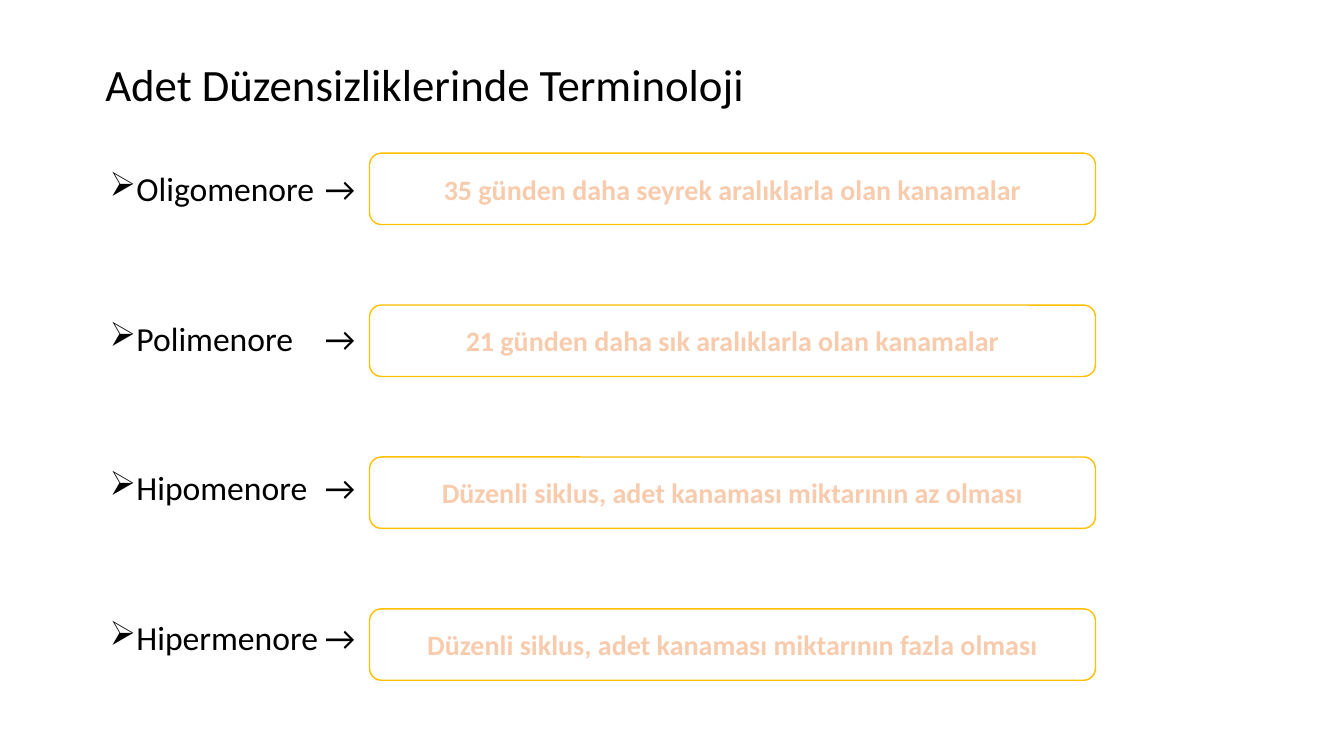
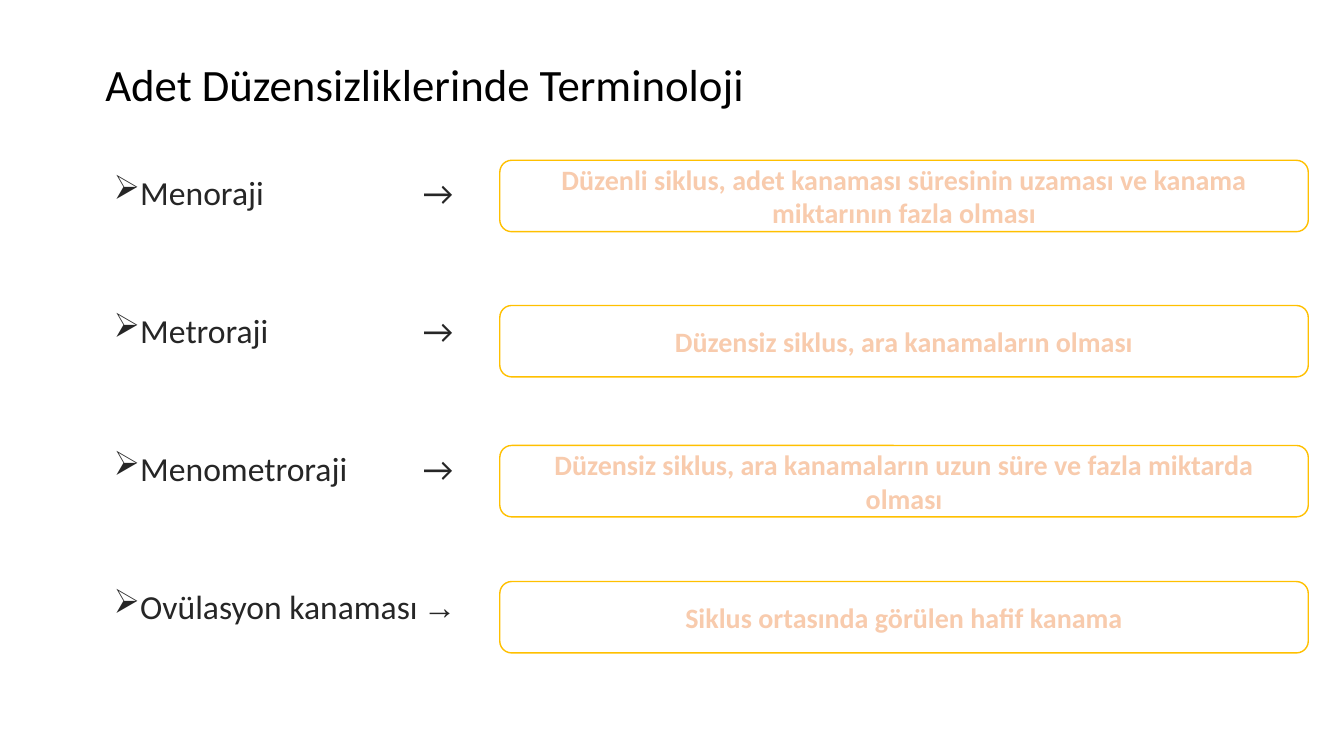
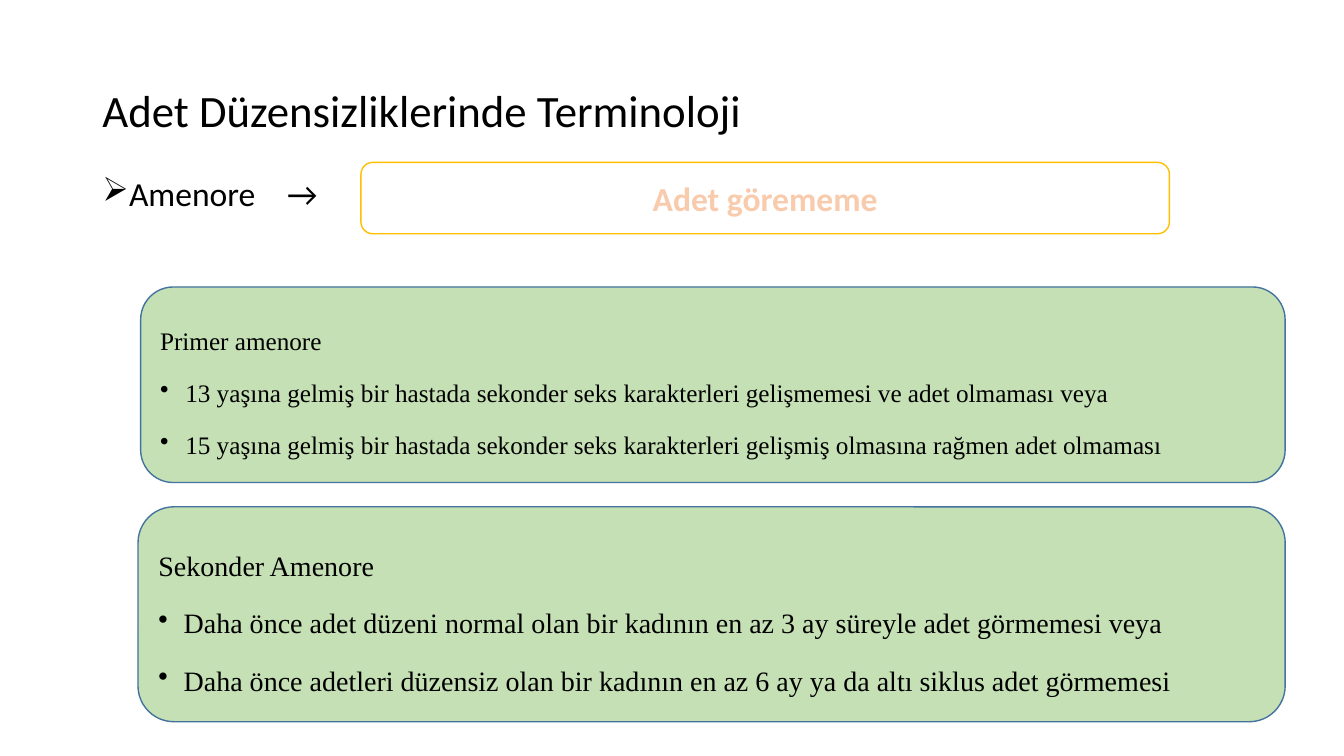
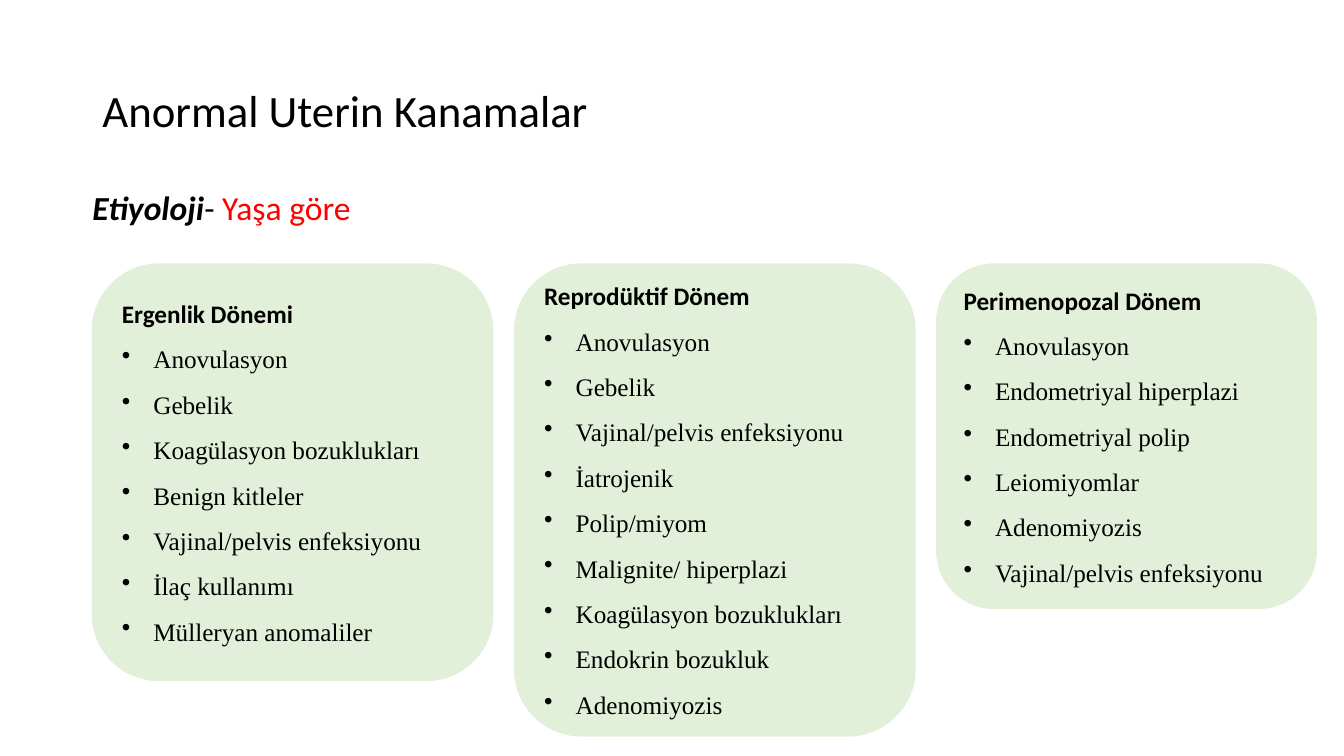
from pptx import Presentation
from pptx.dml.color import RGBColor
from pptx.enum.shapes import MSO_SHAPE as Shape
from pptx.enum.text import MSO_ANCHOR as Anchor, MSO_AUTO_SIZE as AutoSize, PP_ALIGN as Align
from pptx.oxml.ns import qn
from pptx.util import Pt
from lxml.etree import SubElement

# Shared style
SANS, SERIF = "Calibri", "Times New Roman"
BLACK, DARK, RED, WHITE = "000000", "262626", "FF0000", "FFFFFF"
GOLD, PEACH = "FFC000", "F8CBAD"
GREEN, PALE_GREEN, BLUE = "C5E0B4", "E2F0D9", "43739E"
HIGH_TITLE, LOW_TITLE = (68, 10), (66, 29)
TERMINOLOGY = "Adet Düzensizliklerinde Terminoloji"
DEFINITION_HEIGHT = 51


def color(hex_code):
    return RGBColor.from_string(hex_code)


def style(run, size, font=SANS, ink=BLACK, bold=False, italic=False):
    run.font.size = Pt(size)
    run.font.name = font
    run.font.color.rgb = color(ink)
    run.font.bold = bold
    run.font.italic = italic


def add_bullet(paragraph, char, indent):
    properties = paragraph._p.get_or_add_pPr()
    properties.set("marL", str(Pt(indent)))
    properties.set("indent", str(-Pt(indent)))
    SubElement(properties, qn("a:buChar")).set("char", char)


def write(frame, lines, size, font=SANS, ink=BLACK, bold=False, spacing=1.0,
          gap=0, align=Align.LEFT):
    """Fill a frame with evenly spaced paragraphs of one style."""
    frame.text = "\n".join(lines)
    for index, paragraph in enumerate(frame.paragraphs):
        paragraph.alignment = align
        paragraph.line_spacing = spacing
        paragraph.space_before = Pt(gap if index else 0)
        style(paragraph.runs[0], size, font, ink, bold)


def add_titled_slide(deck, title, corner):
    slide = deck.slides.add_slide(deck.slide_layouts[5])
    heading = slide.shapes.title
    heading.left, heading.top = (Pt(length) for length in corner)
    heading.width, heading.height = Pt(828), Pt(104)
    frame = heading.text_frame
    frame.auto_size = AutoSize.NONE
    frame.vertical_anchor = Anchor.MIDDLE
    write(frame, [title], 32, spacing=0.9)
    return slide


def add_text(slide, left, top, width, height):
    frame = slide.shapes.add_textbox(Pt(left), Pt(top), Pt(width), Pt(height)).text_frame
    frame.word_wrap = True
    return frame


def add_card(slide, left, top, width, height, fill, line):
    card = slide.shapes.add_shape(
        Shape.ROUNDED_RECTANGLE, Pt(left), Pt(top), Pt(width), Pt(height))
    card.shadow.inherit = False
    card.fill.solid()
    card.fill.fore_color.rgb = color(fill)
    card.line.color.rgb = color(line)
    card.line.width = Pt(1)
    card.text_frame.word_wrap = True
    card.text_frame.vertical_anchor = Anchor.MIDDLE
    return card.text_frame


def add_terms(slide, terms, left, top, arrow_left, pitch=0, spacing=0.9, ink=BLACK):
    """Add a column of bulleted terms and a column of arrows beside it."""
    line_height = 24 * 1.22 * spacing
    height = pitch * (len(terms) - 1) + 40
    term_frame = add_text(slide, left, top, arrow_left + 16 - left, height)
    arrow_frame = add_text(slide, arrow_left, top, 45, height)
    for frame, lines in ((term_frame, terms), (arrow_frame, ["→"] * len(terms))):
        write(frame, lines, 24, ink=ink, spacing=spacing,
              gap=round(max(pitch - line_height, 0), 1))
    for paragraph in term_frame.paragraphs:
        add_bullet(paragraph, "➢", 18)
    return arrow_frame


def add_definition(slide, definition, left, top, width, size=20):
    frame = add_card(slide, left, top, width, DEFINITION_HEIGHT, WHITE, GOLD)
    write(frame, [definition], size, ink=PEACH, bold=True, align=Align.CENTER)


def add_amenorrhea_card(slide, lines, left, top, width, height, size):
    frame = add_card(slide, left, top, width, height, GREEN, BLUE)
    write(frame, lines, size, SERIF, spacing=1.5, gap=5, align=Align.JUSTIFY)
    for paragraph in frame.paragraphs[1:]:
        add_bullet(paragraph, "•", 18)


def add_period_card(slide, period, causes, left, width, height):
    frame = add_card(slide, left, 188.6, width, height, PALE_GREEN, PALE_GREEN)
    write(frame, [period, *causes], 18, SERIF, spacing=1.5)
    heading = frame.paragraphs[0]
    heading.line_spacing = 1.0
    style(heading.runs[0], 18, bold=True)
    for paragraph in frame.paragraphs[1:]:
        add_bullet(paragraph, "•", 22.5)


# Slides
def build_cycle_terms(deck):
    slide = add_titled_slide(deck, TERMINOLOGY, HIGH_TITLE)
    definitions = {
        "Oligomenore": "35 günden daha seyrek aralıklarla olan kanamalar",
        "Polimenore": "21 günden daha sık aralıklarla olan kanamalar",
        "Hipomenore": "Düzenli siklus, adet kanaması miktarının az olması",
        "Hipermenore": "Düzenli siklus, adet kanaması miktarının fazla olması",
    }
    add_terms(slide, list(definitions), 71.3, 119.5, 225, pitch=107.5)
    for row, definition in enumerate(definitions.values()):
        add_definition(slide, definition, 264, 109.4 + 108.5 * row, 518.5)


def build_bleeding_terms(deck):
    slide = add_titled_slide(deck, TERMINOLOGY, HIGH_TITLE)
    rows = [
        ("Menoraji", 114.5,
         "Düzenli siklus, adet kanaması süresinin uzaması ve kanama miktarının fazla olması"),
        ("Metroraji", 218.2, "Düzensiz siklus, ara kanamaların olması"),
        ("Menometroraji", 318.2,
         "Düzensiz siklus, ara kanamaların uzun süre ve fazla miktarda olması"),
        ("Ovülasyon kanaması", 415.4, "Siklus ortasında görülen hafif kanama"),
    ]
    arrows = add_terms(slide, [term for term, _, _ in rows], 74, 124.5, 295,
                       pitch=99, spacing=0.8, ink=DARK)
    style(arrows.paragraphs[-1].runs[0], 24, SERIF, DARK, bold=True)
    for _, top, definition in rows:
        add_definition(slide, definition, 357, top, 577.5)


def build_amenorrhea(deck):
    slide = add_titled_slide(deck, TERMINOLOGY, LOW_TITLE)
    add_terms(slide, ["Amenore"], 66, 123, 198)
    add_definition(slide, "Adet görememe", 257.8, 116, 577.5, size=24)
    add_amenorrhea_card(slide, [
        "Primer amenore",
        "13 yaşına gelmiş bir hastada sekonder seks karakterleri gelişmemesi ve adet olmaması veya",
        "15 yaşına gelmiş bir hastada sekonder seks karakterleri gelişmiş olmasına rağmen adet olmaması",
    ], 100.5, 205, 817.5, 139.7, size=18)
    add_amenorrhea_card(slide, [
        "Sekonder Amenore",
        "Daha önce adet düzeni normal olan bir kadının en az 3 ay süreyle adet görmemesi veya",
        "Daha önce adetleri düzensiz olan bir kadının en az 6 ay ya da altı siklus adet görmemesi",
    ], 98.6, 362, 819.4, 153.5, size=20)


def build_causes_by_age(deck):
    slide = add_titled_slide(deck, "Anormal Uterin Kanamalar", LOW_TITLE)
    subtitle = add_text(slide, 59, 133, 895, 40).paragraphs[0]
    subtitle.line_spacing = 0.9
    for text, look in (("Etiyoloji", {"bold": True, "italic": True}),
                       ("- ", {}),
                       ("Yaşa göre", {"ink": RED})):
        run = subtitle.add_run()
        run.text = text
        style(run, 24, **look)

    periods = [
        ("Ergenlik Dönemi", 286, 297.5,
         ["Anovulasyon", "Gebelik", "Koagülasyon bozuklukları", "Benign kitleler",
          "Vajinal/pelvis enfeksiyonu", "İlaç kullanımı", "Mülleryan anomaliler"]),
        ("Reprodüktif Dönem", 286, 337,
         ["Anovulasyon", "Gebelik", "Vajinal/pelvis enfeksiyonu", "İatrojenik",
          "Polip/miyom", "Malignite/ hiperplazi", "Koagülasyon bozuklukları",
          "Endokrin bozukluk", "Adenomiyozis"]),
        ("Perimenopozal Dönem", 271, 246,
         ["Anovulasyon", "Endometriyal hiperplazi", "Endometriyal polip",
          "Leiomiyomlar", "Adenomiyozis", "Vajinal/pelvis enfeksiyonu"]),
    ]
    for column, (period, width, height, causes) in enumerate(periods):
        add_period_card(slide, period, causes, 66 + 301.6 * column, width, height)


def main():
    deck = Presentation()
    deck.slide_width, deck.slide_height = Pt(960), Pt(540)
    build_cycle_terms(deck)
    build_bleeding_terms(deck)
    build_amenorrhea(deck)
    build_causes_by_age(deck)
    deck.save("out.pptx")


if __name__ == "__main__":
    main()
